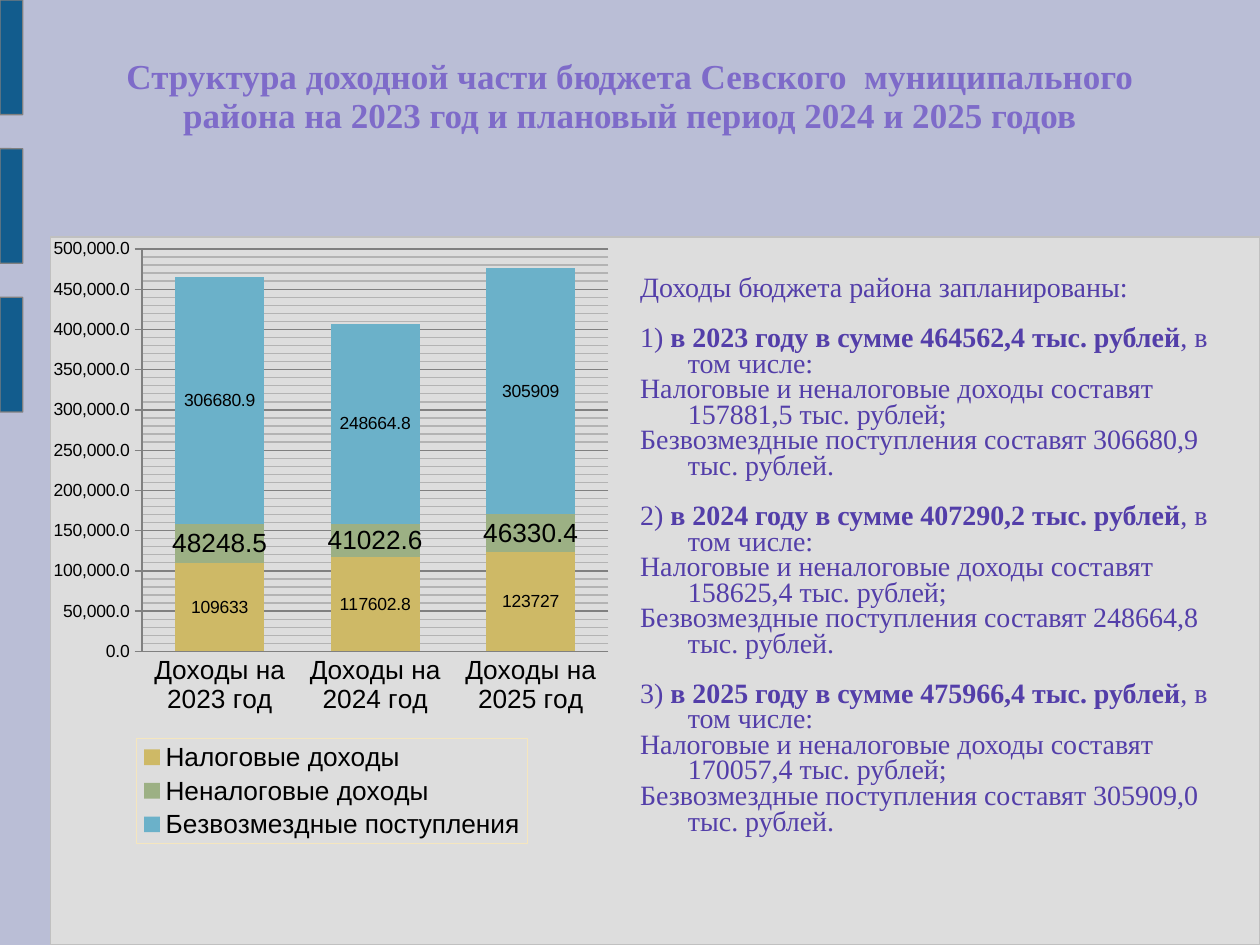
from lxml import etree
from pptx import Presentation
from pptx import util as u
from pptx.chart.data import CategoryChartData
from pptx.dml.color import RGBColor
from pptx.enum import chart as ch, shapes, text
from pptx.oxml import parse_xml
from pptx.oxml.ns import nsdecls, qn

SERIF = "Times New Roman"
TITLE = ("Структура доходной части бюджета Севского  муниципального района "
         "на 2023 год и плановый период 2024 и 2025 годов")
# Year, total, tax and non-tax revenue, transfers
YEARS = [("2023", "464562,4", "157881,5", "306680,9"),
         ("2024", "407290,2", "158625,4", "248664,8"),
         ("2025", "475966,4", "170057,4", "305909,0")]
# Name, values, colour, label size
SERIES = [("Налоговые доходы", (109633, 117602.8, 123727), "CEB966", 10),
          ("Неналоговые доходы", (48248.5, 41022.6, 46330.4), "9CB084", 15),
          ("Безвозмездные поступления", (306680.9, 248664.8, 305909), "6BB1C9", 10)]


def color(value):
    return RGBColor.from_string(value)


def place(s, box):
    s.left, s.top, s.width, s.height = map(u.Inches, box)


def add_run(p, words, size=16, fill="533EA9", bold=False):
    r = p.add_run()
    r.text = words
    r.font.name, r.font.size, r.font.bold = SERIF, u.Pt(size), bold
    r.font.color.rgb = color(fill)


def set_frame(tf, anchor, top=0):
    tf.word_wrap = True
    tf.auto_size = text.MSO_AUTO_SIZE.NONE
    tf.vertical_anchor = anchor
    tf.margin_left = tf.margin_right = tf.margin_bottom = 0
    tf.margin_top = u.Inches(top)


def add_panel(slide, box, fill, line, radius=0):
    kind = shapes.MSO_SHAPE.ROUNDED_RECTANGLE
    sp = slide.shapes.add_shape(kind, *map(u.Inches, box))
    sp.adjustments[0] = radius
    sp.shadow.inherit = False
    sp.fill.solid()
    sp.fill.fore_color.rgb = color(fill)
    sp.line.color.rgb = color(line)
    sp.line.width = u.Pt(0.75)


def add_backdrop(slide):
    slide.background.fill.solid()
    slide.background.fill.fore_color.rgb = color("BABED6")
    add_panel(slide, (0.4, 1.88, 9.6, 5.62), "DDDDDD", "C0C0C0")
    for i in range(3):
        add_panel(slide, (0, 1.18 * i, 0.18, 0.91), "125C8D", "808080", 0.01)


def fill_title(title, box):
    place(title, box)
    tf = title.text_frame
    set_frame(tf, text.MSO_ANCHOR.MIDDLE)
    p = tf.paragraphs[0]
    p.alignment = text.PP_ALIGN.CENTER
    p.line_spacing = 0.93
    add_run(p, TITLE, 20, "7E6BC9", True)


def outline(shade):
    """Chart part properties with no fill and a thin line."""
    return parse_xml(
        f'<c:spPr {nsdecls("c", "a")}><a:noFill/><a:ln w="9525"><a:solidFill>'
        f'<a:srgbClr val="{shade}"/></a:solidFill></a:ln></c:spPr>')


def set_layout(part, x, y, w, h, inner=False):
    """Fix a chart part at fractions of the chart area."""
    for old in part.findall(qn("c:layout")):
        part.remove(old)
    target = '<c:layoutTarget val="inner"/>' if inner else ""
    layout = parse_xml(
        f'<c:layout {nsdecls("c")}><c:manualLayout>{target}'
        '<c:xMode val="edge"/><c:yMode val="edge"/>'
        f'<c:x val="{x}"/><c:y val="{y}"/><c:w val="{w}"/><c:h val="{h}"/>'
        '</c:manualLayout></c:layout>')
    before = part.find(qn("c:legendPos"))
    part.insert(0 if before is None else part.index(before) + 1, layout)


def format_axes(chart):
    cat, val = chart.category_axis, chart.value_axis
    cat.major_tick_mark = ch.XL_TICK_MARK.NONE
    cat.tick_labels.font.size = u.Pt(15)
    val.minimum_scale, val.maximum_scale = 0, 500000
    val.major_unit, val.minor_unit = 50000, 10000
    val.has_major_gridlines = val.has_minor_gridlines = True
    val.major_tick_mark = ch.XL_TICK_MARK.OUTSIDE
    val.tick_labels.font.size = u.Pt(10)
    val.tick_labels.number_format = "#,##0.0"
    val.tick_labels.number_format_is_linked = False
    for part in (cat, val, val.major_gridlines):
        part.format.line.color.rgb = color("808080")
        part.format.line.width = u.Pt(0.75)
    chart.element.find(".//" + qn("c:minorGridlines")).append(outline("B3B3B3"))


def format_legend(chart):
    chart.has_legend = True
    legend = chart.legend
    legend.position = ch.XL_LEGEND_POSITION.BOTTOM
    legend.include_in_layout = False
    legend.font.size = u.Pt(15)
    part = chart.element.find(".//" + qn("c:legend"))
    set_layout(part, 0.16, 0.83, 0.68, 0.17)
    part.find(qn("c:txPr")).addprevious(outline("F5E6BE"))


def add_revenue_chart(slide, box):
    data = CategoryChartData()
    data.categories = [f"Доходы на {year[0]} год" for year in YEARS]
    for name, values, *_ in SERIES:
        data.add_series(name, values)
    chart = slide.shapes.add_chart(ch.XL_CHART_TYPE.COLUMN_STACKED,
                                   *map(u.Inches, box), data).chart
    chart.has_title = False
    chart.font.name, chart.font.size = "Arial", u.Pt(18)
    chart.font.color.rgb = color("000000")
    plot = chart.plots[0]
    plot.gap_width, plot.overlap, plot.vary_by_categories = 75, 100, False
    for series, (_, _, fill, size) in zip(plot.series, SERIES):
        series.format.fill.solid()
        series.format.fill.fore_color.rgb = color(fill)
        labels = series.data_labels
        labels.show_value = True
        labels.position = ch.XL_LABEL_POSITION.CENTER
        labels.font.size = u.Pt(size)
    format_axes(chart)
    format_legend(chart)
    set_layout(chart.element.find(".//" + qn("c:plotArea")),
               0.17, 0.04, 0.81, 0.65, inner=True)


def add_line(tf, *parts, gap=0):
    """Add a hanging paragraph; each part is (words, bold)."""
    p = tf.paragraphs[0] if not tf.text else tf.add_paragraph()
    p.line_spacing = 0.76
    p.space_before, p.space_after = u.Pt(gap), u.Pt(0)
    pPr = p._p.get_or_add_pPr()
    pPr.set("marL", str(u.Inches(0.38)))
    pPr.set("indent", str(-u.Inches(0.38)))
    etree.SubElement(pPr, qn("a:buNone"))
    for words, bold in parts:
        add_run(p, words, bold=bold)


def fill_body(body, box):
    place(body, box)
    tf = body.text_frame
    set_frame(tf, text.MSO_ANCHOR.TOP, top=0.42)
    add_line(tf, ("Доходы бюджета района запланированы:", False))
    for i, (year, total, own, transfers) in enumerate(YEARS, 1):
        add_line(tf, (f"{i}) ", False),
                 (f"в {year} году в сумме {total} тыс. рублей", True),
                 (", в том числе:", False), gap=14)
        add_line(tf, (f"Налоговые и неналоговые доходы составят {own} тыс. рублей;", False))
        add_line(tf, (f"Безвозмездные поступления составят {transfers} тыс. рублей.", False))


def main():
    prs = Presentation()
    prs.slide_width, prs.slide_height = u.Inches(10), u.Inches(7.5)
    slide = prs.slides.add_slide(prs.slide_layouts[1])
    title, body = slide.placeholders
    add_backdrop(slide)
    add_revenue_chart(slide, (0.35, 1.78, 4.57, 4.92))
    fill_title(title, (0.73, 0, 8.54, 1.55))
    fill_body(body, (5.08, 1.78, 4.72, 4.92))
    for s in (title, body):  # bring the text in front of the panels
        slide.shapes._spTree.append(s._element)
    prs.save("out.pptx")


if __name__ == "__main__":
    main()
